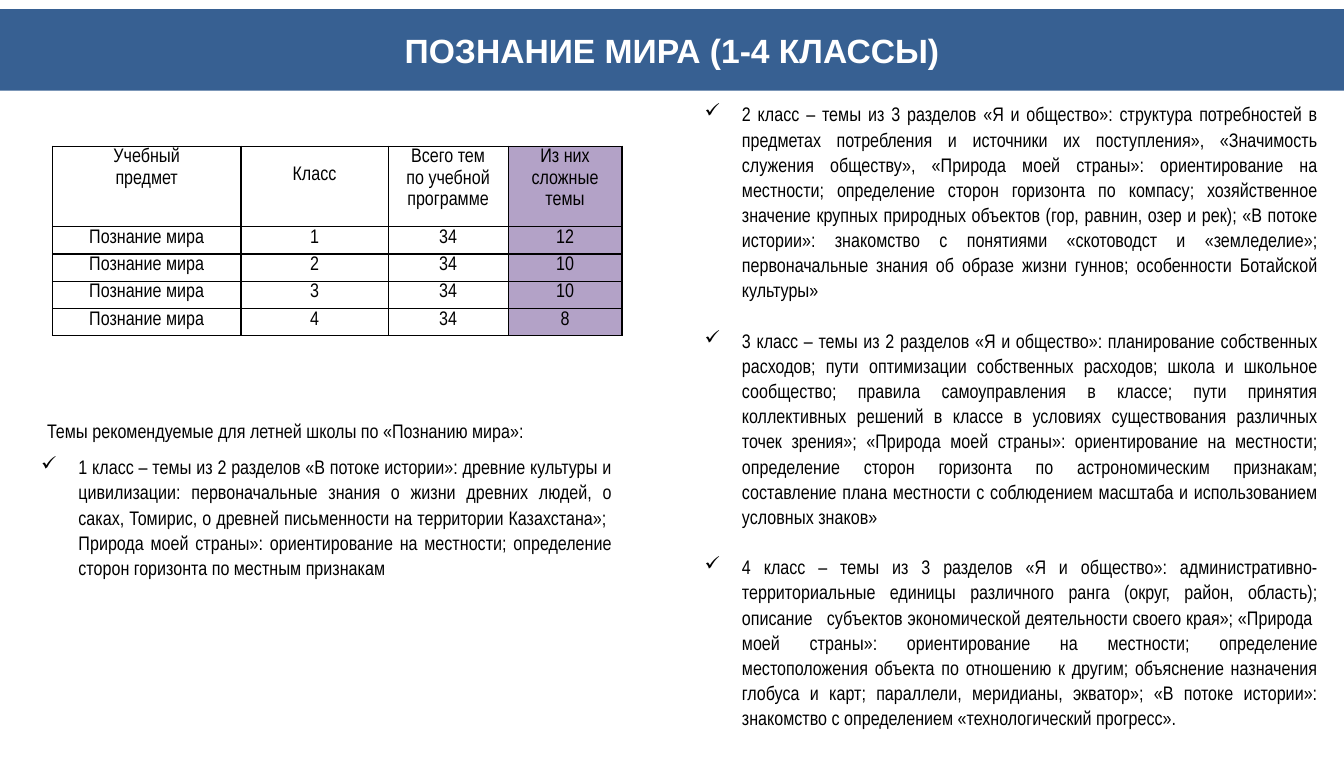
from dataclasses import dataclass

import pptx
import pptx.dml.color
import pptx.enum.text
import pptx.oxml
import pptx.oxml.ns
import pptx.util
from pptx.util import Inches

ALIGN = pptx.enum.text.PP_ALIGN
ANCHOR = pptx.enum.text.MSO_ANCHOR


@dataclass(frozen=True)
class Theme:
    banner: str = "376092"
    accent: str = "B3A2C7"
    ink: str = "000000"
    paper: str = "FFFFFF"
    title_font: str = "Arial"
    body_font: str = "Arial Narrow"
    title_size: int = 24
    body_size: int = 14
    body_spacing: float = 1.07
    table_spacing: float = 1.14


def color(value):
    return pptx.dml.color.RGBColor.from_string(value)


def drawing_element(tag, content="", **attributes):
    """Build one element of the drawing namespace."""
    listed = "".join(f' {name}="{value}"' for name, value in attributes.items())
    namespace = pptx.oxml.ns.nsdecls("a")
    return pptx.oxml.parse_xml(f"<a:{tag} {namespace}{listed}>{content}</a:{tag}>")


class SlideBuilder:
    def __init__(self, presentation, theme):
        self.theme = theme
        self.slide = presentation.slides.add_slide(presentation.slide_layouts[5])

    def style(self, paragraph, alignment, spacing):
        paragraph.alignment = alignment
        paragraph.line_spacing = spacing
        paragraph.font.name = self.theme.body_font
        paragraph.font.size = pptx.util.Pt(self.theme.body_size)
        paragraph.font.color.rgb = color(self.theme.ink)

    def banner(self, text, left, top, width, height):
        title = self.slide.shapes.title
        title.left, title.top = Inches(left), Inches(top)
        title.width, title.height = Inches(width), Inches(height)
        title.fill.solid()
        title.fill.fore_color.rgb = color(self.theme.banner)
        title.text_frame.text = text
        title.text_frame.vertical_anchor = ANCHOR.MIDDLE
        paragraph = title.text_frame.paragraphs[0]
        paragraph.alignment = ALIGN.CENTER
        paragraph.font.name = self.theme.title_font
        paragraph.font.size = pptx.util.Pt(self.theme.title_size)
        paragraph.font.bold = True
        paragraph.font.color.rgb = color(self.theme.paper)

    def text_box(self, left, top, width, height, topics, heading=None, gap=18):
        """Add check-marked topics, with an optional plain heading above them."""
        box = self.slide.shapes.add_textbox(
            Inches(left), Inches(top), Inches(width), Inches(height))
        frame = box.text_frame
        frame.word_wrap = True
        if heading:
            frame.margin_top = Inches(0.1)
        texts = ([heading] if heading else []) + topics
        frame.text = "\n".join(texts)
        for index, paragraph in enumerate(frame.paragraphs):
            is_heading = heading is not None and index == 0
            self.style(paragraph, ALIGN.LEFT if is_heading else ALIGN.JUSTIFY,
                       self.theme.body_spacing)
            if index < len(texts) - 1:
                paragraph.space_after = pptx.util.Pt(gap)
            properties = paragraph._p.get_or_add_pPr()
            if is_heading:
                properties.set("marL", str(Inches(0.06)))
            else:
                self.check_mark(properties)

    def check_mark(self, properties):
        properties.set("marL", str(Inches(0.37)))
        properties.set("indent", str(-Inches(0.37)))
        bullet = drawing_element("buChar", char="✓")
        properties.insert_element_before(bullet, "a:tabLst", "a:defRPr", "a:extLst")

    def table(self, left, top, widths, heights, rows):
        frame = self.slide.shapes.add_table(
            len(rows), len(widths), Inches(left), Inches(top),
            Inches(sum(widths)), Inches(sum(heights)))
        table = frame.table
        table.first_row = table.horz_banding = False
        for column, width in zip(table.columns, widths):
            column.width = Inches(width)
        for row, height, texts in zip(table.rows, heights, rows):
            row.height = Inches(height)
            is_header = row is table.rows[0] or texts is rows[0]
            for index, (cell, text) in enumerate(zip(row.cells, texts)):
                is_accent = index == len(widths) - 1
                self.cell(cell, text, is_header, is_accent)
        table.cell(0, 1).margin_top = Inches(0.17)

    def cell(self, cell, text, is_header, is_accent):
        cell.text = text
        cell.vertical_anchor = ANCHOR.TOP
        cell.margin_left = cell.margin_right = Inches(0.04 if is_header else 0.07)
        cell.margin_top = cell.margin_bottom = 0
        for paragraph in cell.text_frame.paragraphs:
            self.style(paragraph, ALIGN.CENTER, self.theme.table_spacing)
        cell.fill.solid()
        cell.fill.fore_color.rgb = color(
            self.theme.accent if is_accent else self.theme.paper)
        ink = f'<a:solidFill><a:srgbClr val="{self.theme.ink}"/></a:solidFill>'
        properties = cell._tc.get_or_add_tcPr()
        for position, side in enumerate(("lnL", "lnR", "lnT", "lnB")):
            border = drawing_element(side, ink, w=pptx.util.Pt(1))
            properties.insert(position, border)


TABLE_ROWS = [
    ["Учебный\nпредмет", "Класс", "Всего тем\nпо учебной программе",
     "Из них\nсложные темы"],
] + [["Познание мира", str(grade), "34", str(difficult)]
     for grade, difficult in enumerate((12, 10, 10, 8), start=1)]

FIRST_GRADE = [
    "1 класс – темы из 2 разделов «В потоке истории»: древние культуры и "
    "цивилизации: первоначальные знания о жизни древних людей, о саках, Томирис, "
    "о древней письменности на территории Казахстана»;  Природа моей страны»: "
    "ориентирование на местности; определение сторон горизонта по местным признакам",
]

OTHER_GRADES = [
    "2 класс – темы из 3 разделов «Я и общество»: структура потребностей в "
    "предметах потребления и источники их поступления», «Значимость служения "
    "обществу», «Природа моей страны»: ориентирование на местности; определение "
    "сторон горизонта по компасу; хозяйственное значение крупных природных объектов "
    "(гор, равнин, озер и рек); «В потоке истории»: знакомство с понятиями "
    "«скотоводст и «земледелие»; первоначальные знания об образе жизни гуннов; "
    "особенности Ботайской культуры»",
    "3 класс – темы из 2 разделов «Я и общество»: планирование собственных "
    "расходов; пути оптимизации собственных расходов; школа и школьное сообщество; "
    "правила самоуправления в классе; пути принятия коллективных решений в классе "
    "в условиях существования различных точек зрения»; «Природа моей страны»: "
    "ориентирование на местности; определение сторон горизонта по астрономическим "
    "признакам; составление плана местности с соблюдением масштаба и использованием "
    "условных знаков»",
    "4 класс – темы из 3 разделов «Я и общество»: "
    "административно-территориальные единицы различного ранга (округ, район, "
    "область); описание   субъектов экономической деятельности своего края»; "
    "«Природа  моей страны»: ориентирование на местности; определение "
    "местоположения объекта по отношению к другим; объяснение назначения глобуса и "
    "карт; параллели, меридианы, экватор»; «В потоке истории»: знакомство с "
    "определением «технологический прогресс».",
]


def main():
    presentation = pptx.Presentation()
    presentation.slide_width = Inches(13.33)
    presentation.slide_height = Inches(7.68)
    builder = SlideBuilder(presentation, Theme())
    builder.banner("ПОЗНАНИЕ МИРА (1-4 КЛАССЫ)", 0, 0.09, 13.33, 0.81)
    builder.table(0.52, 1.45, [1.87, 1.46, 1.19, 1.13], [0.8] + [0.27] * 4, TABLE_ROWS)
    builder.text_box(0.31, 4.04, 5.86, 1.8, FIRST_GRADE, gap=8,
                     heading="Темы рекомендуемые для летней школы по «Познанию мира»:")
    builder.text_box(6.89, 0.95, 6.28, 6.64, OTHER_GRADES)
    presentation.save("out.pptx")


if __name__ == "__main__":
    main()
